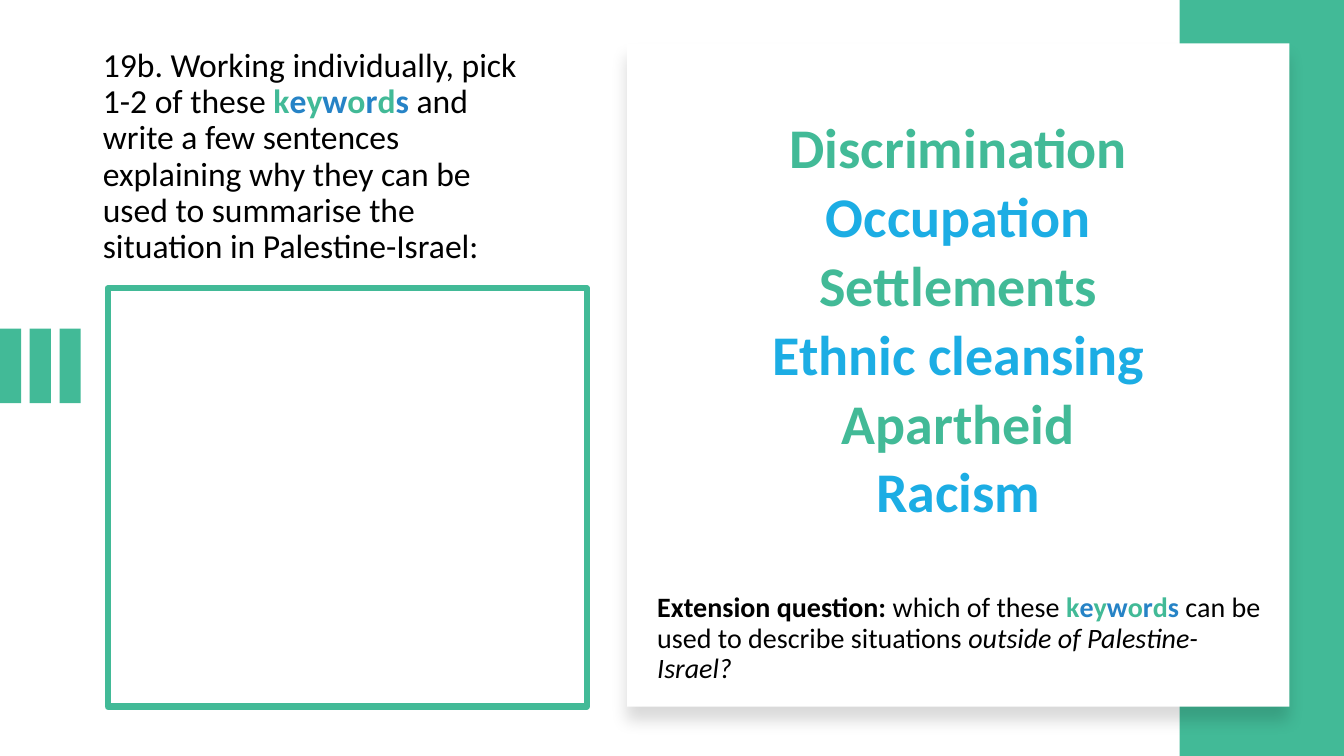
from dataclasses import dataclass
from itertools import cycle

from lxml.etree import SubElement
from pptx import Presentation
from pptx.dml.color import RGBColor
from pptx.enum.shapes import MSO_SHAPE as Shape
from pptx.enum.text import MSO_ANCHOR as Anchor, MSO_AUTO_SIZE as AutoSize, PP_ALIGN as Align
from pptx.oxml.ns import qn
from pptx.util import Inches, Pt


@dataclass(frozen=True)
class Theme:
    font: str = "Calibri"
    green: str = "42BA97"
    blue: str = "2683C6"
    sky: str = "1CADE4"
    black: str = "000000"
    white: str = "FFFFFF"
    title_size: float = 24
    word_size: float = 40
    extension_size: float = 20
    line_spacing: float = 0.9
    frame_width: float = 4.5


@dataclass(frozen=True)
class Box:
    left: float
    top: float
    width: float
    height: float

    def lengths(self) -> tuple:
        return tuple(Inches(n) for n in (self.left, self.top, self.width, self.height))


@dataclass(frozen=True)
class Piece:
    text: str
    color: str
    bold: bool = False
    italic: bool = False


@dataclass(frozen=True)
class Panel:
    box: Box
    fill: str | None = None
    line: str | None = None
    shadow: bool = False


THEME = Theme()
KEYWORDS = [
    Piece(letter, color, bold=True)
    for letter, color in zip("keywords", cycle((THEME.green, THEME.blue)))
]
TITLE = [
    Piece("19b. Working individually, pick 1-2 of these ", THEME.black),
    *KEYWORDS,
    Piece(
        " and write a few sentences explaining why they can be used "
        "to summarise the situation in Palestine-Israel:",
        THEME.black,
    ),
]
EXTENSION = [
    Piece("Extension question: ", THEME.black, bold=True),
    Piece("which of these ", THEME.black),
    *KEYWORDS,
    Piece(" can be used to describe situations ", THEME.black),
    Piece("outside of Palestine-Israel?", THEME.black, italic=True),
]
WORDS = ["Discrimination", "Occupation", "Settlements", "Ethnic cleansing", "Apartheid", "Racism"]
WORD_LINES = [
    [Piece(word, color, bold=True)]
    for word, color in zip(WORDS, cycle((THEME.green, THEME.sky)))
]
BAR_STEP = 0.295
BARS = [Panel(Box(i * BAR_STEP, 3.26, 0.21, 0.74), fill=THEME.green) for i in range(3)]
SIDE_BAND = Panel(Box(11.7, 0, 1.63, 7.5), fill=THEME.green)
CARD = Panel(Box(6.22, 0.43, 6.57, 6.58), fill=THEME.white, shadow=True)
ANSWER_FRAME = Panel(Box(1.07, 2.86, 4.75, 4.15), line=THEME.green)


def add_shadow(shape) -> None:
    effects = shape._element.spPr.find(qn("a:effectLst"))
    shadow = SubElement(
        effects,
        qn("a:outerShdw"),
        blurRad=str(Pt(11)),
        dist=str(Pt(10)),
        dir=str(90 * 60000),
        algn="t",
        rotWithShape="0",
    )
    color = SubElement(shadow, qn("a:srgbClr"), val=THEME.black)
    SubElement(color, qn("a:alpha"), val="15000")


def draw_panel(slide, panel: Panel) -> None:
    shape = slide.shapes.add_shape(Shape.RECTANGLE, *panel.box.lengths())
    shape.shadow.inherit = False
    if panel.fill:
        shape.fill.solid()
        shape.fill.fore_color.rgb = RGBColor.from_string(panel.fill)
    else:
        shape.fill.background()
    if panel.line:
        shape.line.color.rgb = RGBColor.from_string(panel.line)
        shape.line.width = Pt(THEME.frame_width)
    else:
        shape.line.fill.background()
    if panel.shadow:
        add_shadow(shape)


def write_text(
    shape, lines: list[list[Piece]], size: float, anchor, align=Align.LEFT, space_after: float = 0
) -> None:
    frame = shape.text_frame
    frame.word_wrap = True
    frame.auto_size = AutoSize.NONE
    frame.vertical_anchor = anchor
    for index, pieces in enumerate(lines):
        paragraph = frame.add_paragraph() if index else frame.paragraphs[0]
        paragraph.alignment = align
        paragraph.line_spacing = THEME.line_spacing
        paragraph.space_before = Pt(0)
        paragraph.space_after = Pt(space_after)
        for piece in pieces:
            run = paragraph.add_run()
            run.text = piece.text
            run.font.name = THEME.font
            run.font.size = Pt(size)
            run.font.bold = piece.bold
            run.font.italic = piece.italic
            run.font.color.rgb = RGBColor.from_string(piece.color)


def main() -> None:
    presentation = Presentation()
    presentation.slide_width = Inches(13.33)
    presentation.slide_height = Inches(7.5)
    slide = presentation.slides.add_slide(presentation.slide_layouts[5])

    title = slide.shapes.title
    title.left, title.top, title.width, title.height = Box(0.92, 0.43, 4.41, 3.14).lengths()
    write_text(title, [TITLE], THEME.title_size, Anchor.TOP)

    for panel in (*BARS, SIDE_BAND, CARD):
        draw_panel(slide, panel)

    words = slide.shapes.add_textbox(*Box(6.66, 1.64, 5.69, 3.12).lengths())
    write_text(words, WORD_LINES, THEME.word_size, Anchor.MIDDLE, Align.CENTER, space_after=6)

    extension = slide.shapes.add_textbox(*Box(6.42, 4.97, 6.19, 1.87).lengths())
    write_text(extension, [EXTENSION], THEME.extension_size, Anchor.BOTTOM)

    draw_panel(slide, ANSWER_FRAME)
    presentation.save("out.pptx")


if __name__ == "__main__":
    main()
